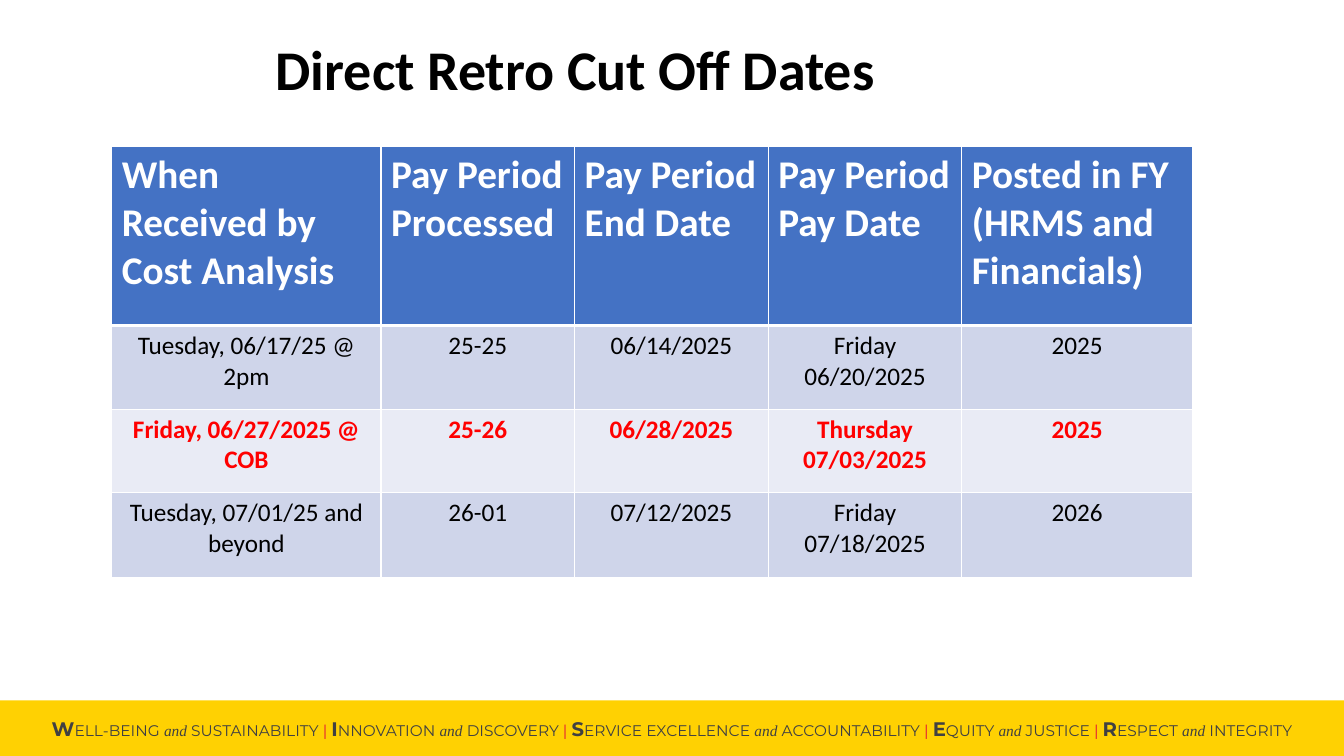
"""Build the slide of direct retro cut off dates."""
from lxml.etree import SubElement
from pptx import Presentation
from pptx.dml.color import RGBColor
from pptx.enum.shapes import MSO_SHAPE
from pptx.enum.text import MSO_ANCHOR, PP_ALIGN
from pptx.oxml.ns import qn
from pptx.util import Cm, Pt

TITLE = "Direct Retro Cut Off Dates"
HEADS = ["When Received by Cost Analysis", "Pay Period Processed",
         "Pay Period End Date", "Pay Period Pay Date",
         "Posted in FY (HRMS and Financials)"]
ROWS = [
    ["Tuesday, 06/17/25 @ 2pm", "25-25", "06/14/2025", "Friday 06/20/2025", "2025"],
    ["Friday, 06/27/2025 @ COB", "25-26", "06/28/2025", "Thursday 07/03/2025", "2025"],
    ["Tuesday, 07/01/25 and beyond", "26-01", "07/12/2025", "Friday 07/18/2025", "2026"],
]
URGENT = 2
VALUES = [
    ("W", "ELL-BEING ", "and", " SUSTAINABILITY"),
    ("I", "NNOVATION ", "and", " DISCOVERY"),
    ("S", "ERVICE EXCELLENCE ", "and", " ACCOUNTABILITY"),
    ("E", "QUITY ", "and", " JUSTICE"),
    ("R", "ESPECT ", "and", " INTEGRITY"),
]
WIDTHS = [6.78, 4.88, 4.88, 4.88, 5.81]
HEIGHTS = [4.52, 2.11, 2.11, 2.13]
WIDE, TALL, BAND = 33.87, 19.05, 1.4
BLUE, PALE, LIGHT, GOLD = "4472C4", "CFD5EA", "E9EBF5", "FFD102"
WHITE, BLACK, RED, GREY, CRIMSON = "FFFFFF", "000000", "FF0000", "404042", "E31937"


def paint(fill, tone):
    """Give a fill one solid colour."""
    fill.solid()
    fill.fore_color.rgb = RGBColor.from_string(tone)


def write(para, text, size=11, face="Calibri", tone=BLACK, bold=False, slant=False):
    """Add a run of text in the given format."""
    run = para.add_run()
    run.text = text
    font = run.font
    font.size, font.name, font.bold, font.italic = Pt(size), face, bold, slant
    paint(font.fill, tone)


def edge(cell, top, base):
    """Draw white borders on a cell."""
    props = cell._tc.get_or_add_tcPr()
    for side, width in (("L", 1), ("R", 1), ("T", top), ("B", base)):
        line = SubElement(props, qn(f"a:ln{side}"), w=str(Pt(width)))
        solid = SubElement(line, qn("a:solidFill"))
        SubElement(solid, qn("a:srgbClr"), val=WHITE)


def add_band(slide):
    """Add the gold band of values at the foot."""
    band = slide.shapes.add_shape(
        MSO_SHAPE.RECTANGLE, 0, Cm(TALL - BAND), Cm(WIDE), Cm(BAND))
    band.shadow.inherit = False
    paint(band.fill, GOLD)
    band.line.fill.background()
    frame = band.text_frame
    frame.word_wrap = True
    frame.vertical_anchor = MSO_ANCHOR.MIDDLE
    para = frame.paragraphs[0]
    para.alignment = PP_ALIGN.CENTER
    for spot, (first, rest, join, last) in enumerate(VALUES):
        if spot:
            write(para, " | ", face="Montserrat", tone=CRIMSON)
        write(para, first, size=14, face="Montserrat", tone=GREY, bold=True)
        write(para, rest, face="Montserrat", tone=GREY)
        write(para, join, face="Times New Roman", tone=GREY, slant=True)
        write(para, last, face="Montserrat", tone=GREY)


def add_title(slide):
    """Add the heading."""
    box = slide.shapes.add_textbox(Cm(6.7), Cm(0.94), Cm(24.36), Cm(2.39))
    box.text_frame.word_wrap = True
    para = box.text_frame.paragraphs[0]
    para.line_spacing = 0.9
    write(para, TITLE, size=40, bold=True)


def add_dates(slide):
    """Add the table of dates."""
    grid = [HEADS] + ROWS
    table = slide.shapes.add_table(
        len(grid), len(HEADS), Cm(2.82), Cm(3.68),
        Cm(sum(WIDTHS)), Cm(sum(HEIGHTS))).table
    for col, width in zip(table.columns, WIDTHS):
        col.width = Cm(width)
    for row, height in zip(table.rows, HEIGHTS):
        row.height = Cm(height)
    for r, texts in enumerate(grid):
        head, urgent = r == 0, r == URGENT
        fill = BLUE if head else PALE if r % 2 else LIGHT
        tone = WHITE if head else RED if urgent else BLACK
        for c, text in enumerate(texts):
            cell = table.cell(r, c)
            edge(cell, 3 if r == 1 else 1, 3 if head else 1)
            paint(cell.fill, fill)
            para = cell.text_frame.paragraphs[0]
            para.alignment = PP_ALIGN.LEFT if head else PP_ALIGN.CENTER
            write(para, text, size=28 if head else 18, tone=tone, bold=head or urgent)


def main():
    """Build and save the slide."""
    deck = Presentation()
    deck.slide_width, deck.slide_height = Cm(WIDE), Cm(TALL)
    slide = deck.slides.add_slide(deck.slide_layouts[6])
    add_band(slide)
    add_title(slide)
    add_dates(slide)
    deck.save("out.pptx")


if __name__ == "__main__":
    main()
